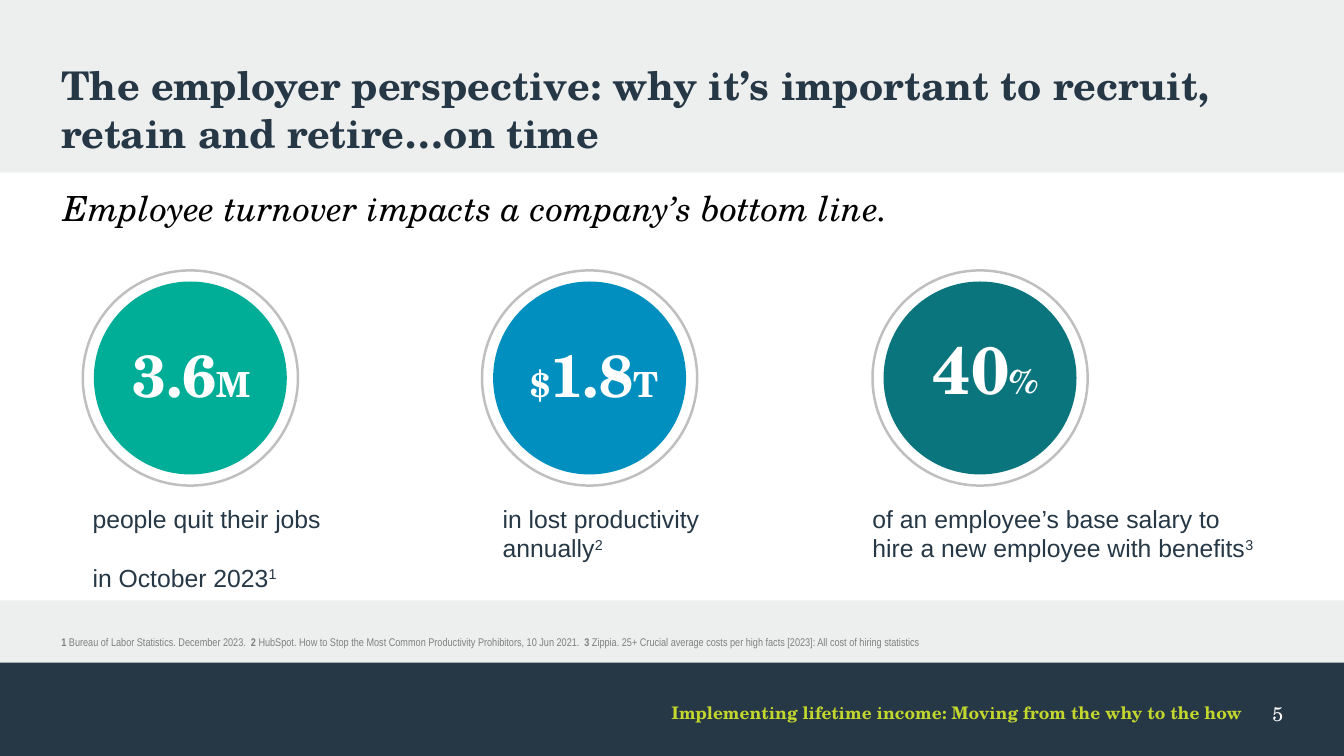
from dataclasses import dataclass
from typing import NamedTuple

from pptx import Presentation
from pptx.dml.color import RGBColor
from pptx.enum.shapes import MSO_SHAPE
from pptx.enum.text import MSO_ANCHOR, MSO_AUTO_SIZE, PP_ALIGN
from pptx.util import Pt

RECTANGLE, OVAL = MSO_SHAPE.RECTANGLE, MSO_SHAPE.OVAL
TOP, BOTTOM = MSO_ANCHOR.TOP, MSO_ANCHOR.BOTTOM
LEFT, CENTER, RIGHT = PP_ALIGN.LEFT, PP_ALIGN.CENTER, PP_ALIGN.RIGHT
NO_AUTOFIT = MSO_AUTO_SIZE.NONE
TITLE_ONLY = 5


@dataclass(frozen=True)
class Theme:
    serif: str = "TeX Gyre Schola"
    sans: str = "Arial"
    narrow: str = "Arial Narrow"
    paper: str = "EDEEEE"
    white: str = "FFFFFF"
    black: str = "000000"
    navy: str = "263746"
    lime: str = "C3D62E"
    gray: str = "808080"
    ring: str = "BFBFBF"
    green: str = "00AD97"
    blue: str = "008FBE"
    teal: str = "0A757D"
    title: int = 32
    lead: int = 28
    unit: int = 28
    caption: int = 20
    number: int = 16
    tagline: int = 14
    note: int = 9


THEME = Theme()


class Box(NamedTuple):
    left: float
    top: float
    width: float
    height: float

    def inside(self, left, top, width, height):
        return Box(self.left + left, self.top + top, width, height)

    def points(self):
        return [Pt(length) for length in self]


class Statistic(NamedTuple):
    left: float
    color: str
    figure: list         # (text, size) pairs
    figure_offset: tuple
    caption: list        # one entry per paragraph
    caption_left: float
    caption_width: float
    mark: str


PAGE = Box(0, 0, 1088, 612)
MARGIN = 49.7
CONTENT_WIDTH = 989.3

STATISTICS = [
    Statistic(67, THEME.green, [("3.6", 48), ("M", THEME.unit)], (31.7, 54.7),
              ["people quit their jobs", "in October 2023"], 7.9, 190, "1"),
    Statistic(390.2, THEME.blue, [("$", THEME.unit), ("1.8", 48), ("T", THEME.unit)],
              (34.6, 54.7), ["in lost productivity annually"], 16.6, 174.2, "2"),
    Statistic(706.3, THEME.teal, [("40", 54), ("%", THEME.unit)], (35.3, 46.1),
              ["of an employee’s base salary to hire a new employee with benefits"],
              0, 312.5, "3"),
]
SOURCES = [
    ("1", " Bureau of Labor Statistics. December 2023.  "),
    ("2", " HubSpot. How to Stop the Most Common Productivity Prohibitors, 10 Jun 2021.  "),
    ("3 ", "Zippia. 25+ Crucial average costs per high facts [2023]: All cost of hiring statistics"),
]


def rgb(color):
    return RGBColor.from_string(color)


def add_shape(page, kind, box, fill, line=None):
    shape = page.shapes.add_shape(kind, *box.points())
    shape.shadow.inherit = False
    shape.fill.solid()
    shape.fill.fore_color.rgb = rgb(fill)
    if line:
        shape.line.color.rgb = rgb(line)
        shape.line.width = Pt(2)
    else:
        shape.line.fill.background()


def format_frame(frame, anchor=TOP, align=LEFT):
    frame.margin_left = frame.margin_right = frame.margin_top = frame.margin_bottom = 0
    frame.word_wrap = True
    frame.auto_size = NO_AUTOFIT
    frame.vertical_anchor = anchor
    para = frame.paragraphs[0]
    para.alignment = align
    return para


def add_text(page, box, anchor=TOP, align=LEFT):
    return format_frame(page.shapes.add_textbox(*box.points()).text_frame, anchor, align)


def add_span(para, text, font, size, color, bold=False, italic=False, raised=False):
    span = para.add_run()
    span.text = text
    span.font.name = font
    span.font.size = Pt(size)
    span.font.color.rgb = rgb(color)
    span.font.bold = bold
    span.font.italic = italic
    if raised:
        span._r.get_or_add_rPr().set("baseline", "30000")


def add_footer(page, box):
    add_shape(page, RECTANGLE, box, THEME.navy)
    tagline = add_text(page, box.inside(406.1, 31.7, 599.8, 20.9), align=RIGHT)
    add_span(tagline, "Implementing lifetime income: Moving from the why to the how",
             THEME.serif, THEME.tagline, THEME.lime, bold=True)
    number = add_text(page, box.inside(1010.2, 31.7, 28.8, 23.8), align=RIGHT)
    add_span(number, "5", THEME.serif, THEME.number, THEME.white)


def add_title(page, box):
    title = page.shapes.title
    title.left, title.top, title.width, title.height = box.points()
    para = format_frame(title.text_frame)
    add_span(para, "The employer perspective: why it’s important to recruit, "
             "retain and retire…on time", THEME.serif, THEME.title, THEME.navy, bold=True)


def add_lead(page, box):
    para = add_text(page, box)
    add_span(para, "Employee turnover impacts a company’s bottom line.",
             THEME.serif, THEME.lead, THEME.black, italic=True)


def add_statistic(page, box, statistic):
    # Ringed disc
    diameter, gap = box.width, 9
    disc = diameter - 2 * gap
    add_shape(page, OVAL, box.inside(0, 0, diameter, diameter), THEME.white, THEME.ring)
    add_shape(page, OVAL, box.inside(gap, gap, disc, disc), statistic.color)

    # Figure with its unit
    figure = add_text(page, box.inside(*statistic.figure_offset, 112.3, 55.4), align=CENTER)
    for text, size in statistic.figure:
        add_span(figure, text, THEME.serif, size, THEME.white, bold=True)

    # Caption with its source mark
    caption_box = box.inside(statistic.caption_left, 188.6, statistic.caption_width, 55.4)
    para = add_text(page, caption_box)
    frame = page.shapes[-1].text_frame
    for index, text in enumerate(statistic.caption):
        if index:
            para = frame.add_paragraph()
            para.space_before = Pt(24)
        add_span(para, text, THEME.sans, THEME.caption, THEME.navy)
    add_span(para, statistic.mark, THEME.sans, THEME.caption, THEME.navy, raised=True)


def add_sources(page, box):
    para = add_text(page, box, anchor=BOTTOM)
    for mark, source in SOURCES:
        add_span(para, mark, THEME.narrow, THEME.note, THEME.gray, bold=True)
        add_span(para, source, THEME.narrow, THEME.note, THEME.gray)


def main():
    deck = Presentation()
    deck.slide_width, deck.slide_height = Pt(PAGE.width), Pt(PAGE.height)
    page = deck.slides.add_slide(deck.slide_layouts[TITLE_ONLY])
    page.background.fill.solid()
    page.background.fill.fore_color.rgb = rgb(THEME.paper)

    # Bands
    add_footer(page, PAGE.inside(0, 536.4, PAGE.width, 75.6))
    add_shape(page, RECTANGLE, PAGE.inside(0, 139.7, PAGE.width, 346.3), THEME.white)

    # Content
    add_title(page, PAGE.inside(MARGIN, MARGIN, CONTENT_WIDTH, 81.4))
    add_lead(page, PAGE.inside(51.8, 151.2, 905.8, 45.4))
    for statistic in STATISTICS:
        add_statistic(page, PAGE.inside(statistic.left, 218.9, 174.2, 244), statistic)
    add_sources(page, PAGE.inside(MARGIN, 495.4, CONTENT_WIDTH, 29.5))

    deck.save("out.pptx")


if __name__ == "__main__":
    main()
